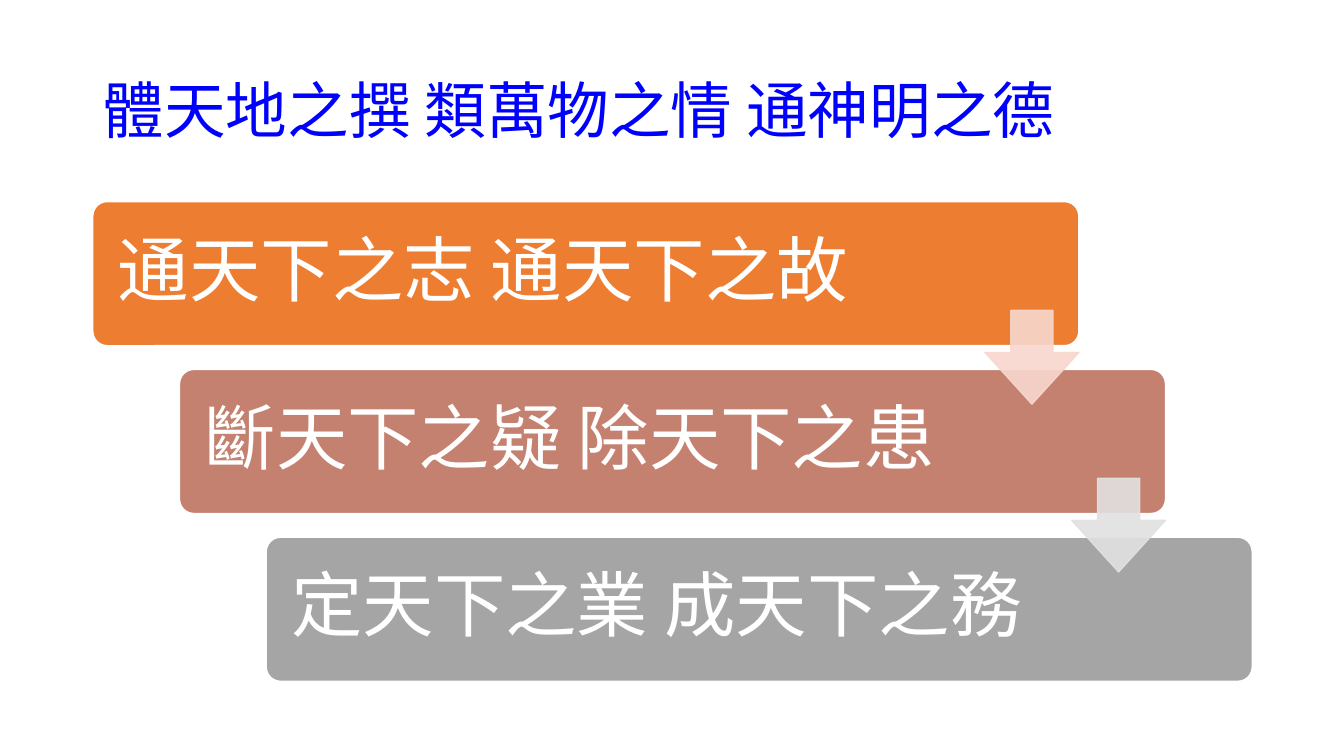
from lxml.etree import SubElement
from pptx import Presentation
from pptx.dml.color import RGBColor
from pptx.enum.shapes import MSO_SHAPE
from pptx.enum.text import MSO_ANCHOR, PP_ALIGN
from pptx.oxml.ns import qn
from pptx.util import Inches, Pt

FONT = "Noto Sans CJK SC"
COLORS = {
    "title": "0000FF",
    "white": "FFFFFF",
    "orange": "ED7D31",
    "rose": "C48170",
    "gray": "A5A5A5",
    "pale rose": "F8D7CE",
    "pale gray": "E1E1E1",
}
STEPS = [
    ("通天下之志 通天下之故", "orange", 8.23),
    ("斷天下之疑 除天下之患", "rose", 7.9),
    ("定天下之業 成天下之務", "gray", 7.9),
]
ARROW_COLORS = ["pale rose", "pale gray"]
STEP_WIDTH, STEP_HEIGHT = 9.78, 1.43
ARROW_SIZE = 0.93


def color(name):
    return RGBColor.from_string(COLORS[name])


def add_text(slide, box, text, size, color_name, side_inset, end_inset):
    """Place one left-aligned, vertically centred line of text in the box."""
    text_box = slide.shapes.add_textbox(*map(Inches, box))
    frame = text_box.text_frame
    frame.word_wrap = True
    frame.vertical_anchor = MSO_ANCHOR.MIDDLE
    frame.margin_left = frame.margin_right = Inches(side_inset)
    frame.margin_top = frame.margin_bottom = Inches(end_inset)
    paragraph = frame.paragraphs[0]
    paragraph.text = text
    paragraph.alignment = PP_ALIGN.LEFT
    paragraph.line_spacing = 0.9
    paragraph.font.size = Pt(size)
    paragraph.font.color.rgb = color(color_name)
    paragraph.font.name = FONT
    properties = paragraph._p.pPr.find(qn("a:defRPr"))
    SubElement(properties, qn("a:ea"), typeface=FONT)


def add_block(slide, preset, box, adjustments, fill, line, opacity=100):
    """Add a filled and outlined preset shape; opacity is in percent."""
    shape = slide.shapes.add_shape(preset, *map(Inches, box))
    shape.shadow.inherit = False
    for index, value in enumerate(adjustments):
        shape.adjustments[index] = value
    shape.fill.solid()
    shape.fill.fore_color.rgb = color(fill)
    shape.line.color.rgb = color(line)
    shape.line.width = Pt(1)
    if opacity < 100:
        for color_element in shape._element.spPr.iter(qn("a:srgbClr")):
            SubElement(color_element, qn("a:alpha"), val=str(opacity * 1000))


def add_staircase(slide, left, top, width, height):
    """Spread the steps from the top left to the bottom right of the box."""
    gaps = len(STEPS) - 1
    shift_x = (width - STEP_WIDTH) / gaps
    shift_y = (height - STEP_HEIGHT) / gaps
    for index, (text, fill, text_width) in enumerate(STEPS):
        x, y = left + index * shift_x, top + index * shift_y
        add_block(slide, MSO_SHAPE.ROUNDED_RECTANGLE,
                  (x, y, STEP_WIDTH, STEP_HEIGHT), [0.1], fill, "white")
        add_text(slide, (x + 0.04, y + 0.04, text_width, STEP_HEIGHT - 0.09),
                 text, 51, "white", 0.21, 0.21)
    for index, name in enumerate(ARROW_COLORS):
        x = left + index * shift_x + STEP_WIDTH - ARROW_SIZE
        y = top + index * shift_y + 1.08
        add_block(slide, MSO_SHAPE.DOWN_ARROW, (x, y, ARROW_SIZE, ARROW_SIZE),
                  [0.45, 0.55], name, name, opacity=90)


def main():
    presentation = Presentation()
    presentation.slide_width = Inches(13.33)
    presentation.slide_height = Inches(7.5)
    slide = presentation.slides.add_slide(presentation.slide_layouts[6])
    add_text(slide, (0.92, 0.4, 11.5, 1.45),
             "體天地之撰 類萬物之情 通神明之德", 44, "title", 0.1, 0.05)
    add_staircase(slide, 0.92, 2, 11.5, 4.76)
    presentation.save("out.pptx")


if __name__ == "__main__":
    main()
